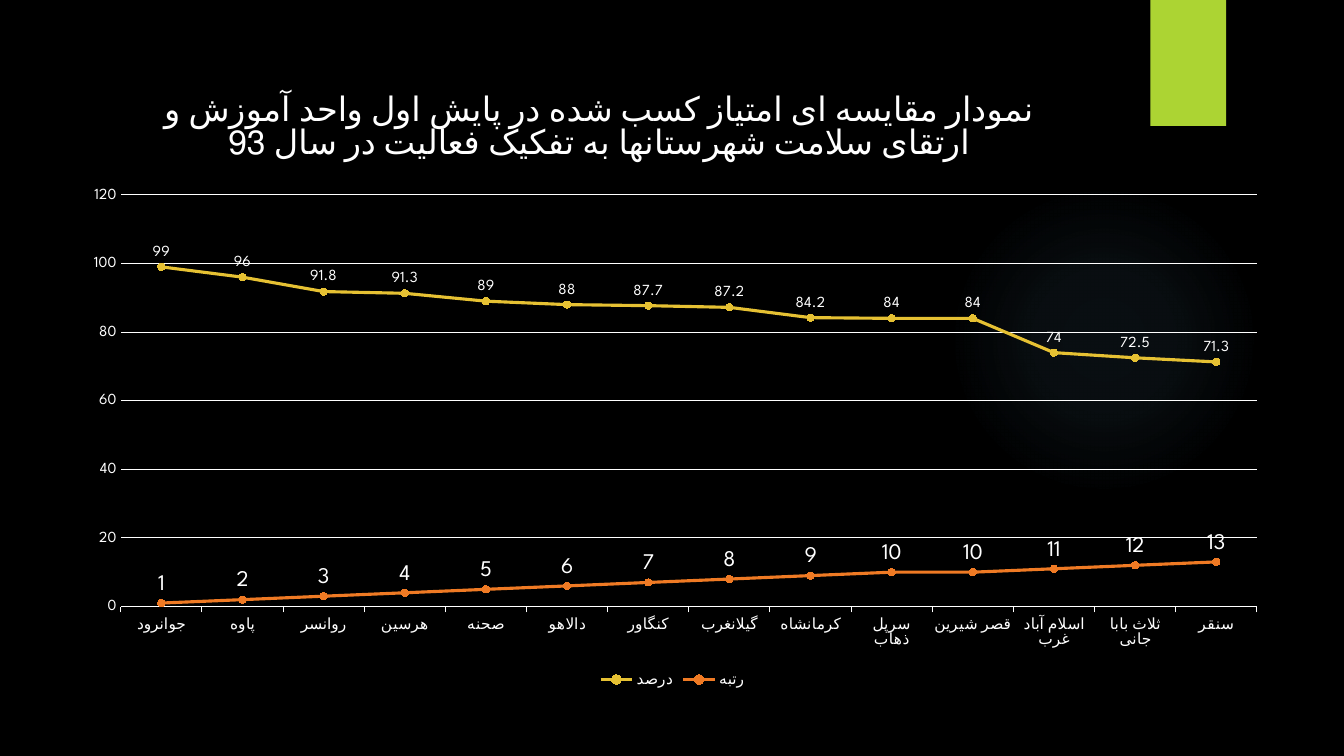
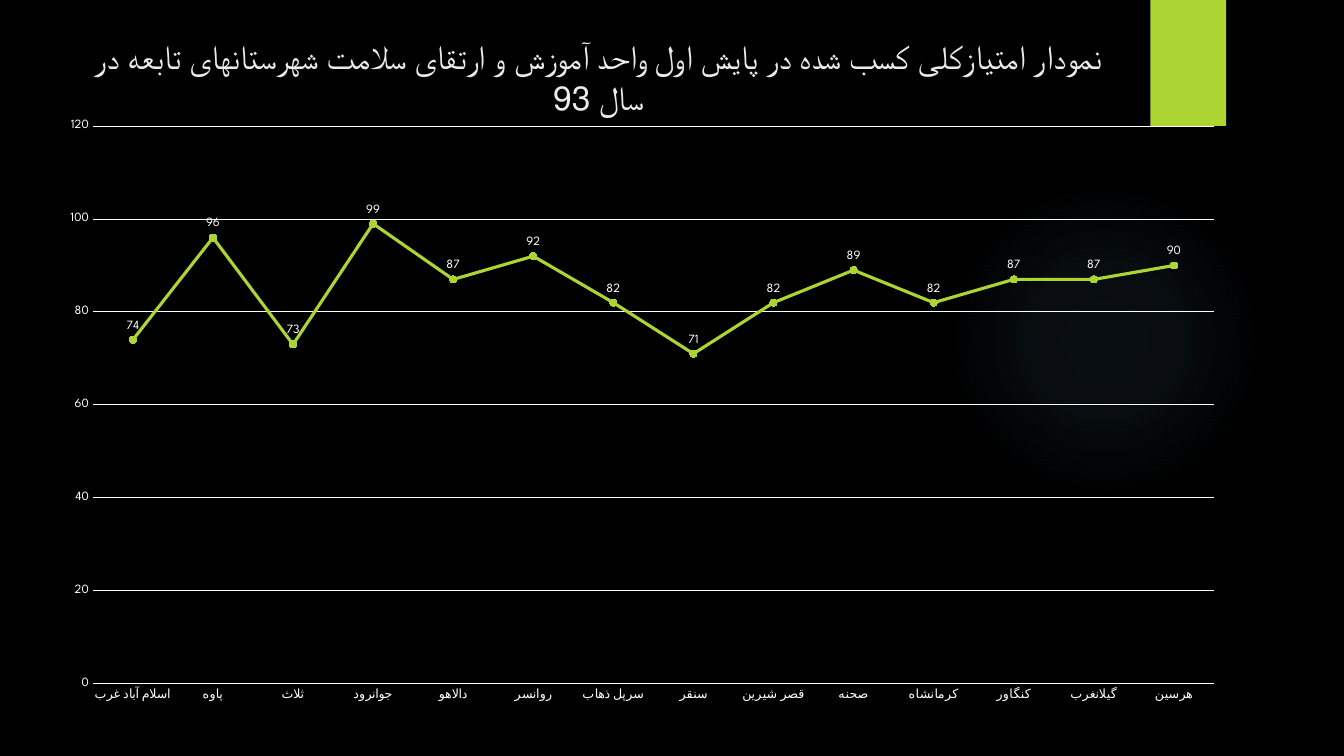
import pptx
import pptx.chart.data
import pptx.dml.color
import pptx.enum.chart
import pptx.enum.shapes
import pptx.enum.text
import pptx.oxml
import pptx.oxml.ns
import pptx.util

SLIDE_WIDTH = pptx.util.Inches(13.33)
SLIDE_HEIGHT = pptx.util.Inches(7.5)
FONT = "League Spartan"
BLACK, WHITE, PALE = "000000", "FFFFFF", "EBEBEB"
GREEN, YELLOW, ORANGE, GLOW = "ACD433", "E6C133", "EF7A24", "7AC4F0"
TITLE_ONLY, BLANK = 5, 6

RANKED_COUNTIES = [
    "جوانرود", "پاوه", "روانسر", "هرسین", "صحنه", "دالاهو", "کنگاور",
    "گیلانغرب", "کرمانشاه", "سرپل ذهاب", "قصر شیرین", "اسلام آباد غرب",
    "ثلاث بابا جانی", "سنقر",
]
COUNTIES = [
    "اسلام آباد غرب", "پاوه", "ثلاث", "جوانرود", "دالاهو", "روانسر",
    "سرپل ذهاب", "سنقر", "قصر شیرین", "صحنه", "کرمانشاه", "کنگاور",
    "گیلانغرب", "هرسین",
]
PERCENTS = [99, 96, 91.8, 91.3, 89, 88, 87.7, 87.2, 84.2, 84, 84, 74, 72.5, 71.3]
RANKS = [1, 2, 3, 4, 5, 6, 7, 8, 9, 10, 10, 11, 12, 13]
SCORES = [74, 96, 73, 99, 87, 92, 82, 71, 82, 89, 82, 87, 87, 90]


def rgb(hex_color):
    return pptx.dml.color.RGBColor.from_string(hex_color)


def area(left, top, width, height):
    """Turn percentages of the slide's size into lengths."""
    return (
        round(SLIDE_WIDTH * left / 100), round(SLIDE_HEIGHT * top / 100),
        round(SLIDE_WIDTH * width / 100), round(SLIDE_HEIGHT * height / 100),
    )


def format_font(font, size, color=WHITE):
    font.name = FONT
    font.size = pptx.util.Pt(size)
    font.bold = False
    font.color.rgb = rgb(color)


def write_text(text_frame, text, size=24, color=WHITE):
    """Write one centred right-to-left paragraph."""
    text_frame.text = text
    paragraph = text_frame.paragraphs[0]
    paragraph.alignment = pptx.enum.text.PP_ALIGN.CENTER
    paragraph._p.get_or_add_pPr().set("rtl", "1")
    format_font(paragraph.runs[0].font, size, color)


def format_line(line, color, width):
    line.color.rgb = rgb(color)
    line.width = pptx.util.Pt(width)


def add_plain_shape(slide, kind, place, color):
    shape = slide.shapes.add_shape(kind, *place)
    shape.shadow.inherit = False
    shape.fill.solid()
    shape.fill.fore_color.rgb = rgb(color)
    shape.line.fill.background()
    return shape


def fade_from_center(shape, color, stops):
    """Replace the solid fill by a circular one; stops are (position, opacity)."""
    stop_xml = "".join(
        f'<a:gs pos="{position * 1000}"><a:srgbClr val="{color}">'
        f'<a:alpha val="{opacity * 1000}"/></a:srgbClr></a:gs>'
        for position, opacity in stops
    )
    gradient = pptx.oxml.parse_xml(
        f'<a:gradFill {pptx.oxml.ns.nsdecls("a")} rotWithShape="1">'
        f"<a:gsLst>{stop_xml}</a:gsLst>"
        '<a:path path="circle">'
        '<a:fillToRect l="50000" t="50000" r="50000" b="50000"/>'
        "</a:path></a:gradFill>"
    )
    solid = shape.element.spPr.find(pptx.oxml.ns.qn("a:solidFill"))
    solid.getparent().replace(solid, gradient)


def decorate_master(presentation, slide):
    """Draw the shared glow and band, then move them to the slide master."""
    master = presentation.slide_master
    master.background.fill.solid()
    master.background.fill.fore_color.rgb = rgb(BLACK)
    shapes = pptx.enum.shapes.MSO_SHAPE
    glow = add_plain_shape(slide, shapes.OVAL, area(70.6, 24.4, 23.1, 41.07), GLOW)
    fade_from_center(glow, GLOW, [(0, 7), (36, 6), (69, 0)])
    band = add_plain_shape(slide, shapes.RECTANGLE, area(85.6, 0, 5.63, 16.67), GREEN)
    for index, shape in enumerate((glow, band), start=2):
        master.shapes.element.insert(index, shape.element)


def set_layout(element, index, target="", **shares):
    """Place a chart part by percentages x, y, w, h of the chart's size."""
    qn = pptx.oxml.ns.qn
    for old_layout in element.findall(qn("c:layout")):
        element.remove(old_layout)
    target_xml = f'<c:layoutTarget val="{target}"/>' if target else ""
    modes = "".join(f'<c:{key}Mode val="edge"/>' for key in "xy")
    values = "".join(f'<c:{key} val="{share / 100}"/>' for key, share in shares.items())
    element.insert(index, pptx.oxml.parse_xml(
        f'<c:layout {pptx.oxml.ns.nsdecls("c")}><c:manualLayout>'
        f"{target_xml}{modes}{values}</c:manualLayout></c:layout>"
    ))


def format_axes(chart, size, category_tick):
    tick_marks = pptx.enum.chart.XL_TICK_MARK
    category_axis, value_axis = chart.category_axis, chart.value_axis
    for axis in (category_axis, value_axis):
        axis.minor_tick_mark = tick_marks.NONE
        format_font(axis.tick_labels.font, size)
    category_axis.major_tick_mark = category_tick
    format_line(category_axis.format.line, WHITE, 0.75)
    value_axis.major_tick_mark = tick_marks.NONE
    value_axis.minimum_scale, value_axis.maximum_scale = 0, 120
    value_axis.major_unit = 20
    value_axis.format.line.fill.background()
    value_axis.has_major_gridlines = True
    format_line(value_axis.major_gridlines.format.line, WHITE, 0.75)


def format_series(series, color, label_size):
    series.smooth = False
    format_line(series.format.line, color, 2.25)
    marker = series.marker
    marker.style = pptx.enum.chart.XL_MARKER_STYLE.CIRCLE
    marker.size = 5
    marker.format.fill.solid()
    marker.format.fill.fore_color.rgb = rgb(color)
    format_line(marker.format.line, color, 0.75)
    labels = series.data_labels
    labels.show_value = True
    labels.position = pptx.enum.chart.XL_LABEL_POSITION.ABOVE
    format_font(labels.font, label_size)


def add_line_chart(slide, place, plot_place, categories, lines, size, category_tick):
    """Add a line chart; lines are (name, values, color, label size)."""
    data = pptx.chart.data.CategoryChartData()
    data.categories = categories
    for name, values, _, _ in lines:
        data.add_series(name, values)
    chart = slide.shapes.add_chart(
        pptx.enum.chart.XL_CHART_TYPE.LINE_MARKERS, *place, data
    ).chart
    chart.has_title = False
    chart.has_legend = False
    format_font(chart.font, size)
    format_axes(chart, size, category_tick)
    plot = chart.plots[0]
    plot.vary_by_categories = False
    for series, (_, _, color, label_size) in zip(plot.series, lines):
        format_series(series, color, label_size)
    plot_area = chart.element.find(".//" + pptx.oxml.ns.qn("c:plotArea"))
    set_layout(plot_area, 0, target="inner", **plot_place)
    return chart


def build_ranking_slide(slide):
    chart = add_line_chart(
        slide, area(4.73, 10.67, 90.6, 80.8), dict(x=4.7, y=18.7, w=93.3, h=67.4),
        RANKED_COUNTIES,
        [("درصد", PERCENTS, YELLOW, 11), ("رتبه", RANKS, ORANGE, 16)],
        size=11, category_tick=pptx.enum.chart.XL_TICK_MARK.OUTSIDE,
    )
    chart.has_title = True
    write_text(
        chart.chart_title.text_frame,
        "نمودار مقایسه ای امتیاز کسب شده در پایش اول واحد آموزش و ارتقای "
        "سلامت شهرستانها به تفکیک فعالیت در سال 93",
    )
    set_layout(chart.chart_title.element, 1, x=7.8, y=0.5)
    chart.has_legend = True
    chart.legend.position = pptx.enum.chart.XL_LEGEND_POSITION.BOTTOM
    chart.legend.include_in_layout = False
    format_font(chart.legend.font, 11)


def build_score_slide(slide):
    title = slide.shapes.title
    title.left, title.top, title.width, title.height = area(5.93, 4.13, 77.2, 10.13)
    title.text_frame.auto_size = pptx.enum.text.MSO_AUTO_SIZE.NONE
    title.text_frame.vertical_anchor = pptx.enum.text.MSO_ANCHOR.TOP
    write_text(
        title.text_frame,
        "نمودار امتیازکلی کسب شده در پایش اول واحد آموزش و ارتقای سلامت "
        "شهرستانهای تابعه در سال 93",
        color=PALE,
    )
    add_line_chart(
        slide, area(3.45, 14.4, 88.65, 81.6), dict(x=3.9, y=2.8, w=94.1, h=90.4),
        COUNTIES, [("Series 1", SCORES, GREEN, 9)],
        size=9, category_tick=pptx.enum.chart.XL_TICK_MARK.NONE,
    )


def main():
    presentation = pptx.Presentation()
    presentation.slide_width, presentation.slide_height = SLIDE_WIDTH, SLIDE_HEIGHT
    layouts = presentation.slide_layouts
    ranking_slide = presentation.slides.add_slide(layouts[BLANK])
    decorate_master(presentation, ranking_slide)
    build_ranking_slide(ranking_slide)
    build_score_slide(presentation.slides.add_slide(layouts[TITLE_ONLY]))
    presentation.save("out.pptx")


if __name__ == "__main__":
    main()
